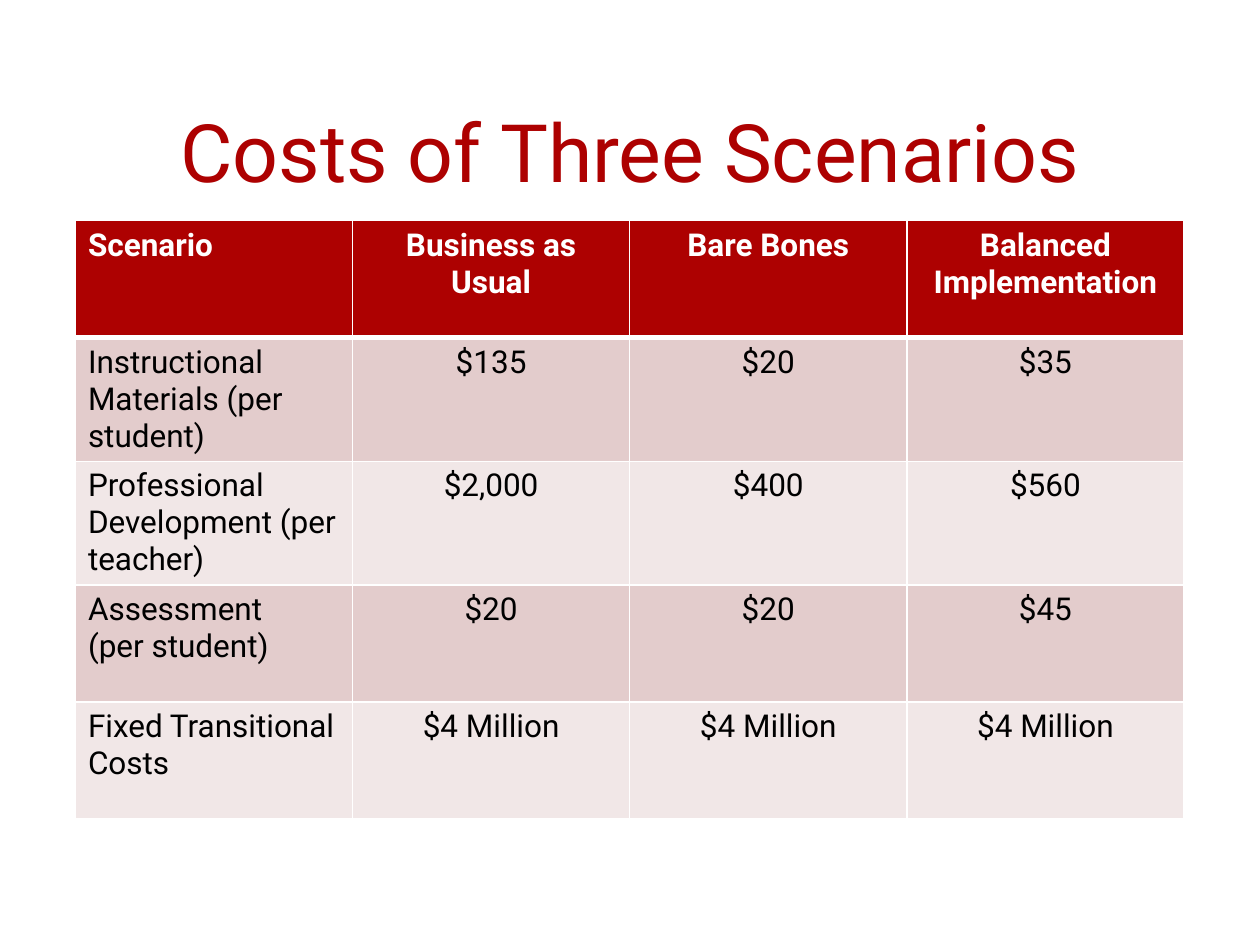
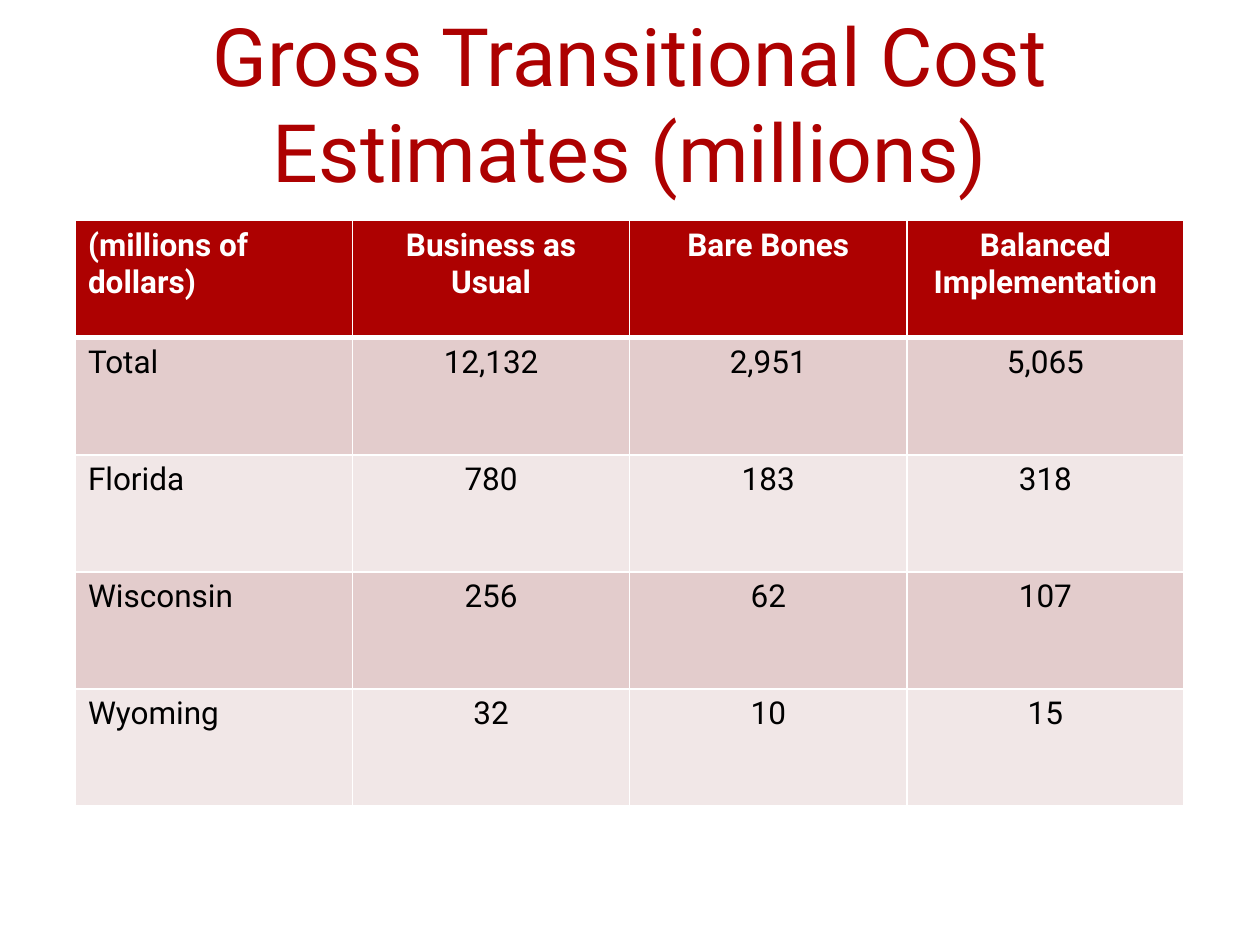
from lxml.etree import SubElement
from pptx import Presentation
from pptx.dml.color import RGBColor
from pptx.enum.text import MSO_ANCHOR, MSO_AUTO_SIZE, PP_ALIGN
from pptx.oxml.ns import qn
from pptx.util import Cm, Pt

COLOURS = {
    "accent": "AD0101",
    "band_dark": "E3CCCC",
    "band_light": "F1E7E7",
    "text": "000000",
    "white": "FFFFFF",
}
FONT = "Roboto"
TITLE_BOX = (1.52, 0.3, 22.35, 3.71)
TABLE_BOX = (1.52, 4.45, 22.35, 11.8)
SCENARIOS = ["Business as Usual", "Bare Bones", "Balanced Implementation"]
SLIDES = [
    ("Costs of Three Scenarios", [
        ["Scenario", *SCENARIOS],
        ["Instructional Materials (per student)", "$135", "$20", "$35"],
        ["Professional Development (per teacher)", "$2,000", "$400", "$560"],
        ["Assessment\n(per student)", "$20", "$20", "$45"],
        ["Fixed Transitional Costs", "$4 Million", "$4 Million", "$4 Million"],
    ]),
    ("Gross Transitional Cost Estimates (millions)", [
        ["(millions of dollars)", *SCENARIOS],
        ["Total", "12,132", "2,951", "5,065"],
        ["Florida", "780", "183", "318"],
        ["Wisconsin", "256", "62", "107"],
        ["Wyoming", "32", "10", "15"],
    ]),
]


def colour(name):
    """Return the named colour."""
    return RGBColor.from_string(COLOURS[name])


def write(frame, text, size, colour_name, align, bold=False):
    """Write each line of the text as a paragraph with one run."""
    for index, line in enumerate(text.split("\n")):
        paragraph = frame.add_paragraph() if index else frame.paragraphs[0]
        paragraph.alignment = align
        run = paragraph.add_run()
        run.text = line
        run.font.name = FONT
        run.font.size = Pt(size)
        run.font.bold = bold
        run.font.color.rgb = colour(colour_name)


def place_title(title, text, box):
    """Place the title in its box, standing on the bottom edge."""
    title.left, title.top, title.width, title.height = map(Cm, box)
    frame = title.text_frame
    frame.auto_size = MSO_AUTO_SIZE.NONE
    frame.word_wrap = True
    frame.vertical_anchor = MSO_ANCHOR.BOTTOM
    frame.margin_bottom = 0
    write(frame, text, 46, "accent", PP_ALIGN.CENTER)


def rule_cell(cell, row):
    """Draw white cell borders, thicker between header and body."""
    thick_side = {0: "lnB", 1: "lnT"}.get(row)
    properties = cell._tc.get_or_add_tcPr()
    for side in ("lnL", "lnR", "lnT", "lnB"):
        width = Pt(3 if side == thick_side else 1)
        line = SubElement(properties, qn(f"a:{side}"), w=str(width))
        fill = SubElement(line, qn("a:solidFill"))
        SubElement(fill, qn("a:srgbClr"), val=COLOURS["white"])


def add_cost_table(slide, rows, box):
    """Add a table with equal rows and columns that fills the box."""
    table = slide.shapes.add_table(len(rows), len(rows[0]), *map(Cm, box)).table
    for row, values in enumerate(rows):
        header = row == 0
        band = "accent" if header else "band_dark" if row % 2 else "band_light"
        for column, value in enumerate(values):
            cell = table.cell(row, column)
            rule_cell(cell, row)
            cell.fill.solid()
            cell.fill.fore_color.rgb = colour(band)
            write(cell.text_frame, value, 18, "white" if header else "text",
                  PP_ALIGN.CENTER if column else PP_ALIGN.LEFT, header)


def add_cost_slide(presentation, heading, rows):
    """Add a slide with a title above a cost table."""
    slide = presentation.slides.add_slide(presentation.slide_layouts[5])
    slide.background.fill.solid()
    slide.background.fill.fore_color.rgb = colour("white")
    place_title(slide.shapes.title, heading, TITLE_BOX)
    add_cost_table(slide, rows, TABLE_BOX)


def main():
    """Build and save the presentation."""
    presentation = Presentation()
    presentation.slide_width = Cm(25.4)
    presentation.slide_height = Cm(19.05)
    for heading, rows in SLIDES:
        add_cost_slide(presentation, heading, rows)
    presentation.save("out.pptx")


if __name__ == "__main__":
    main()
